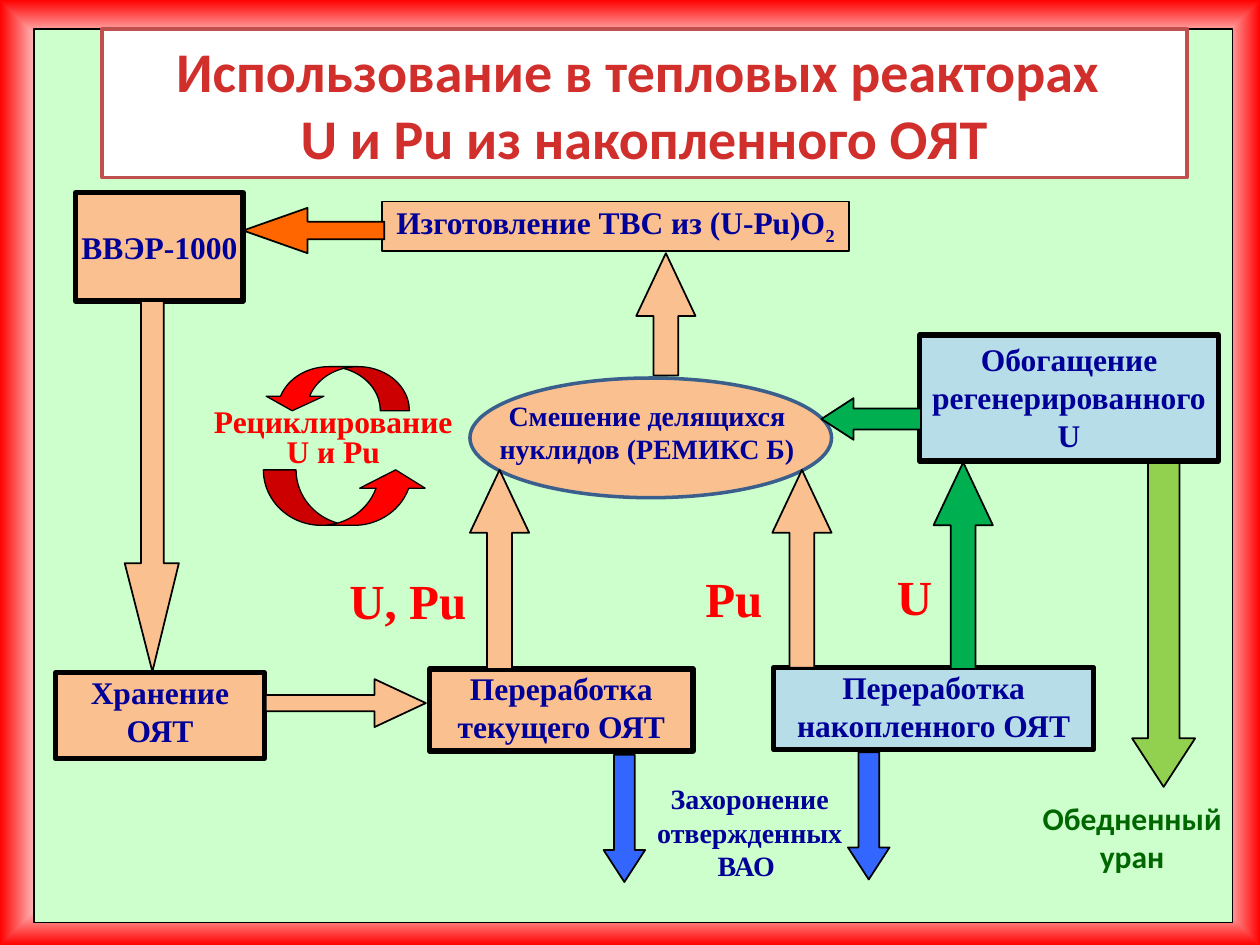
from pptx import Presentation
from pptx.dml.color import RGBColor
from pptx.enum.shapes import MSO_SHAPE
from pptx.enum.text import MSO_ANCHOR, MSO_AUTO_SIZE, PP_ALIGN
from pptx.oxml import parse_xml
from pptx.oxml.ns import nsdecls
from pptx.util import Inches, Pt

RECT, OVAL = MSO_SHAPE.RECTANGLE, MSO_SHAPE.OVAL
RIGHT, LEFT, UP = MSO_SHAPE.RIGHT_ARROW, MSO_SHAPE.LEFT_ARROW, MSO_SHAPE.UP_ARROW
CURVED = MSO_SHAPE.CURVED_DOWN_ARROW
TOP, MIDDLE = MSO_ANCHOR.TOP, MSO_ANCHOR.MIDDLE
CENTER, ALIGN_LEFT = PP_ALIGN.CENTER, PP_ALIGN.LEFT
NO_FIT = MSO_AUTO_SIZE.NONE

BLACK = RGBColor(0x00, 0x00, 0x00)
WHITE = RGBColor(0xFF, 0xFF, 0xFF)
MINT = RGBColor(0xCC, 0xFF, 0xCC)
PEACH = RGBColor(0xFA, 0xC0, 0x90)
PALE_BLUE = RGBColor(0xB7, 0xDE, 0xE8)
NAVY = RGBColor(0x00, 0x00, 0x99)
RED = RGBColor(0xFF, 0x00, 0x00)
BRICK = RGBColor(0xC0, 0x50, 0x4D)
TITLE_RED = RGBColor(0xD0, 0x2F, 0x2C)
STEEL = RGBColor(0x3A, 0x5F, 0x8C)
BLUE = RGBColor(0x33, 0x66, 0xFF)
ORANGE = RGBColor(0xFF, 0x66, 0x00)
GREEN = RGBColor(0x00, 0xB0, 0x50)
LIME = RGBColor(0x92, 0xD0, 0x50)
DARK_GREEN = RGBColor(0x00, 0x66, 0x00)

SERIF, SANS = "Times New Roman", "Calibri"
UP_ADJ, BLOCK_ADJ = (0.42, 1.06), (0.5, 0.77)
NO_INSETS, DEFAULT_INSETS = (0, 0), (0.1, 0.05)


def place(origin, rect):
    """Turn a rectangle relative to a region's corner into slide lengths."""
    x, y, w, h = rect
    return [Inches(v) for v in (origin[0] + x, origin[1] + y, w, h)]


def paint(sp, fill, line, width):
    sp.shadow.inherit = False
    sp.fill.solid()
    sp.fill.fore_color.rgb = fill
    sp.line.color.rgb = line
    sp.line.width = Pt(width)


def add_shape(s, kind, origin, rect, fill, line=BLACK, width=1, adj=(), rotation=0):
    sp = s.shapes.add_shape(kind, *place(origin, rect))
    paint(sp, fill, line, width)
    for i, value in enumerate(adj):
        sp.adjustments[i] = value
    sp.rotation = rotation
    return sp


def write(sp, text, size=18, color=NAVY, font=SERIF, insets=NO_INSETS,
          anchor=TOP, align=CENTER, spacing=None):
    tf = sp.text_frame
    tf.word_wrap = True
    tf.auto_size = NO_FIT
    tf.vertical_anchor = anchor
    tf.margin_left = tf.margin_right = Inches(insets[0])
    tf.margin_top = tf.margin_bottom = Inches(insets[1])
    tf.text = text
    for p in tf.paragraphs:
        p.alignment = align
        p.line_spacing = spacing
        p.font.name = font
        p.font.size = Pt(size)
        p.font.bold = True
        p.font.color.rgb = color


def add_stage(s, origin, rect, text, fill=PEACH, width=3, **style):
    sp = add_shape(s, RECT, origin, rect, fill, width=width)
    write(sp, text, **style)
    return sp


def add_label(s, origin, rect, text, **style):
    write(s.shapes.add_textbox(*place(origin, rect)), text, **style)


def set_background(s):
    """White centre fading to a red rim."""
    s.background.fill.solid()
    bg_pr = s._element.xpath(".//p:bgPr")[0]
    stops = "".join(f'<a:gs pos="{pos}"><a:srgbClr val="{color}"/></a:gs>'
                    for pos, color in ((0, WHITE), (90000, WHITE), (100000, RED)))
    gradient = parse_xml(
        f'<a:gradFill {nsdecls("a")} rotWithShape="1"><a:gsLst>{stops}</a:gsLst>'
        '<a:path path="shape"><a:fillToRect l="50000" t="50000" r="50000" b="50000"/>'
        '</a:path></a:gradFill>')
    bg_pr.replace(bg_pr[0], gradient)


def draw_frame(s, origin):
    """Panel with the title standing on its upper edge."""
    panel = add_shape(s, RECT, origin, (0, 0, 9.51, 7.09), MINT, width=0.75)
    title = s.shapes.title
    panel._element.addnext(title._element)
    title.left, title.top, title.width, title.height = place(origin, (0.54, 0, 8.61, 1.18))
    paint(title, WHITE, BRICK, 2)
    write(title, "Использование в тепловых реакторах \nU и Pu из накопленного ОЯТ",
          size=32, color=TITLE_RED, font=SANS, insets=DEFAULT_INSETS, anchor=MIDDLE)


def draw_reactor(s, origin):
    """Reactor, spent fuel storage and the arrows leaving them."""
    add_stage(s, origin, (0.16, 0, 1.33, 0.86), "ВВЭР-1000",
              insets=(0.02, 0.02), anchor=MIDDLE)
    add_stage(s, origin, (0, 3.81, 1.66, 0.68), "Хранение ОЯТ")
    outline = [(0.55, 2.94), (0.68, 2.94), (0.68, 0.86), (0.86, 0.86),
               (0.86, 2.94), (0.98, 2.94), (0.77, 3.8)]
    points = [(Inches(origin[0] + x), Inches(origin[1] + y)) for x, y in outline]
    builder = s.shapes.build_freeform(*points[0])
    builder.add_line_segments(points[1:], close=True)
    paint(builder.convert_to_shape(), PEACH, BLACK, 1)
    add_shape(s, RIGHT, origin, (1.67, 3.86, 1.27, 0.38), PEACH, adj=(0.34, 1.07))


def draw_fabrication(s, origin):
    sp = add_stage(s, origin, (1.1, 0, 3.71, 0.39), "Изготовление ТВС из (U-Pu)O",
                   width=1, insets=(0.06, 0.01))
    r = sp.text_frame.paragraphs[0].add_run()
    r.text = "2"
    r.font._element.set("baseline", "-25000")
    add_shape(s, LEFT, origin, (0, 0.05, 1.12, 0.36), ORANGE, adj=(0.39, 1.42))


def draw_mixing(s, origin):
    add_shape(s, OVAL, origin, (0, 0.99, 2.87, 0.95), PEACH, STEEL, 2)
    add_label(s, origin, (0.05, 1.15, 2.71, 0.95),
              "Смешение делящихся нуклидов (РЕМИКС Б)", size=16)
    add_shape(s, UP, origin, (1.32, 0, 0.47, 0.97), PEACH, adj=UP_ADJ)


def draw_recycling(s, origin):
    for rect, adj, flip in (((0.53, 0, 1.16, 0.35), (0.66, 1.31, 0.33), "flipH"),
                            ((0.53, 0.82, 1.31, 0.44), (0.59, 1.18, 0.33), "flipV")):
        sp = add_shape(s, CURVED, origin, rect, RED, width=0.75, adj=adj)
        sp._element.spPr.xfrm.set(flip, "1")
    add_label(s, origin, (0, 0.29, 2.17, 0.58), "Рециклирование U и Pu",
              color=RED, insets=DEFAULT_INSETS, spacing=0.8)


def draw_current_fuel(s, origin):
    """Reprocessing of current fuel, with its waste outlet."""
    add_stage(s, origin, (0.74, 1.58, 2.09, 0.65), "Переработка текущего ОЯТ")
    add_shape(s, UP, origin, (1.06, 0, 0.47, 1.58), PEACH, adj=UP_ADJ)
    add_shape(s, RIGHT, origin, (1.78, 2.6, 1.01, 0.33), BLUE, adj=BLOCK_ADJ, rotation=90)
    add_label(s, origin, (0, 0.76, 1.23, 0.56), "U, Pu ", size=28, color=RED,
              insets=(0, 0.04))
    add_label(s, origin, (2.34, 2.51, 1.88, 0.73), "Захоронение отвержденных ВАО ",
              size=16, anchor=MIDDLE)


def draw_accumulated_fuel(s, origin):
    """Reprocessing of accumulated fuel and enrichment of its uranium."""
    add_stage(s, origin, (0.64, 2.64, 2.54, 0.65), "Переработка накопленного ОЯТ",
              fill=PALE_BLUE)
    add_stage(s, origin, (1.8, 0, 2.37, 1), "Обогащение регенерированного U",
              fill=PALE_BLUE, insets=(0.08, 0.04))
    add_shape(s, UP, origin, (0.63, 1.07, 0.47, 1.57), PEACH, adj=UP_ADJ)
    add_shape(s, UP, origin, (1.91, 1.01, 0.47, 1.64), GREEN, adj=UP_ADJ)
    for rect, color, rotation in (((0.89, 3.65, 1.01, 0.33), BLUE, 90),
                                  ((2.45, 2.05, 2.57, 0.5), LIME, 90),
                                  ((1.02, 0.5, 0.79, 0.33), GREEN, 180)):
        add_shape(s, RIGHT, origin, rect, color, adj=BLOCK_ADJ, rotation=rotation)
    for x, y, text in ((0, 1.8, "Pu"), (1.52, 1.79, "U")):
        add_label(s, origin, (x, y, 0.86, 0.57), text, size=28, color=RED,
                  insets=DEFAULT_INSETS, align=ALIGN_LEFT)
    add_label(s, origin, (2.47, 3.63, 2.03, 0.71), "Обедненный уран",
              color=DARK_GREEN, font=SANS, insets=DEFAULT_INSETS)


def main():
    prs = Presentation()
    prs.slide_width, prs.slide_height = Inches(10), Inches(7.5)
    s = prs.slides.add_slide(prs.slide_layouts[5])
    set_background(s)
    draw_frame(s, (0.27, 0.23))
    draw_mixing(s, (3.73, 2.01))
    draw_reactor(s, (0.44, 1.53))
    draw_fabrication(s, (1.93, 1.6))
    draw_recycling(s, (1.56, 2.91))
    draw_current_fuel(s, (2.67, 3.73))
    draw_accumulated_fuel(s, (5.5, 2.66))
    prs.save("out.pptx")


if __name__ == "__main__":
    main()
